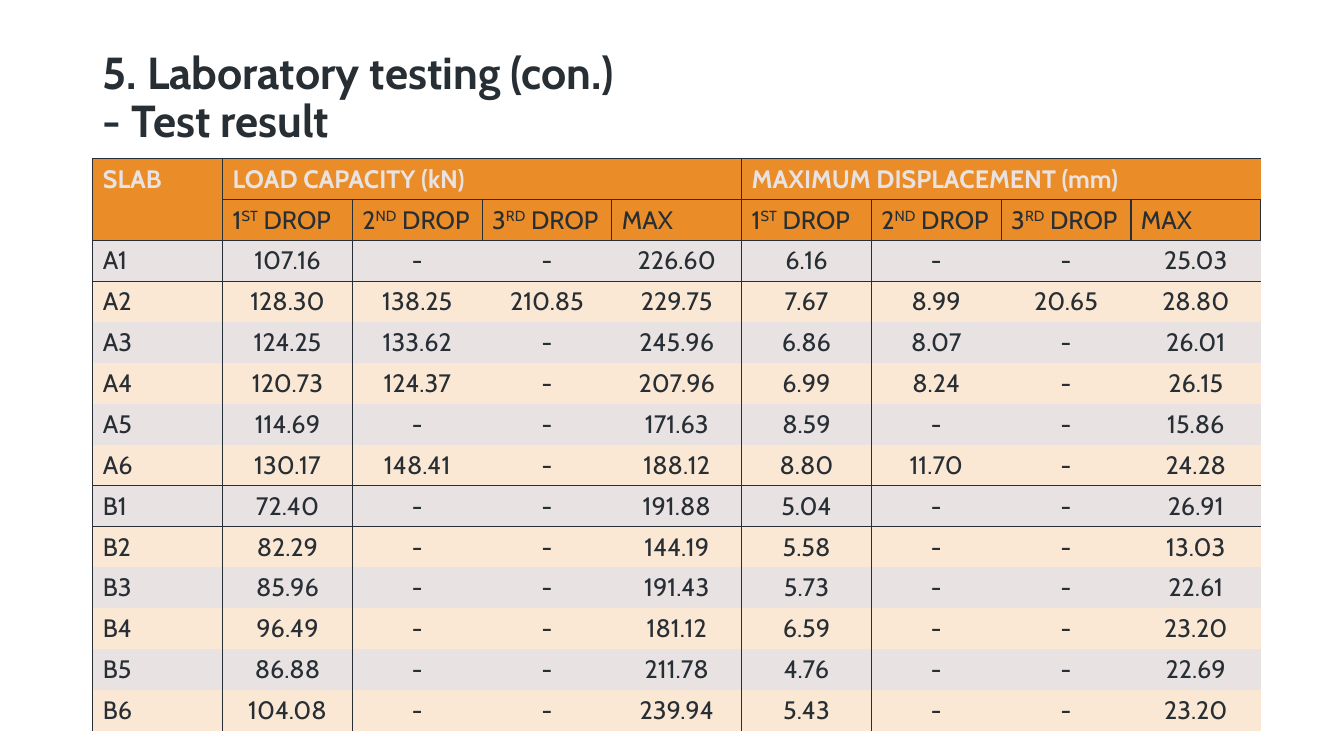
from pptx import Presentation, util as u
from pptx.dml.color import RGBColor
from pptx.enum import text
from pptx.oxml import parse_xml
from pptx.oxml.ns import nsdecls

INK, ORANGE, GREY, CREAM = "272E34", "EA8C27", "E8E3E2", "FBE8D4"
PLAIN = "{2D5ABB26-0587-4C30-8999-92F81FD0307C}"
DROPS = ["1^ST^ DROP", "2^ND^ DROP", "3^RD^ DROP", "MAX"]
HEADS = [
    ["SLAB", "LOAD CAPACITY (kN)", "", "", "", "MAXIMUM DISPLACEMENT (mm)", "", "", ""],
    [""] + DROPS * 2,
]
TESTS = """
A1 107.16 - - 226.60 6.16 - - 25.03
A2 128.30 138.25 210.85 229.75 7.67 8.99 20.65 28.80
A3 124.25 133.62 - 245.96 6.86 8.07 - 26.01
A4 120.73 124.37 - 207.96 6.99 8.24 - 26.15
A5 114.69 - - 171.63 8.59 - - 15.86
A6 130.17 148.41 - 188.12 8.80 11.70 - 24.28
B1 72.40 - - 191.88 5.04 - - 26.91
B2 82.29 - - 144.19 5.58 - - 13.03
B3 85.96 - - 191.43 5.73 - - 22.61
B4 96.49 - - 181.12 6.59 - - 23.20
B5 86.88 - - 211.78 4.76 - - 22.69
B6 104.08 - - 239.94 5.43 - - 23.20
"""
ROWS = HEADS + [line.split() for line in TESTS.strip().splitlines()]
MERGES = [(0, 0, 1, 0), (0, 1, 0, 4), (0, 5, 0, 8)]


def color(code):
    return RGBColor.from_string(code)


def upright(row, edge):
    """Whether a vertical rule runs along this column edge."""
    return edge in (0, 1, 5) or row == 1 or (row == 0 and edge == 9)


def level(edge, col):
    """Whether a horizontal rule runs along this row edge."""
    return edge in (0, 2, 8) or (edge == 1 and col > 0)


class Deck:
    font = "Cabin"

    def __init__(self):
        self.prs = Presentation()
        self.prs.slide_width, self.prs.slide_height = u.Cm(33.87), u.Cm(19.05)
        self.slide = self.prs.slides.add_slide(self.prs.slide_layouts[6])

    def style(self, para, size, code, bold=False):
        font = para.font
        font.name, font.size, font.bold = self.font, u.Pt(size), bold
        font.color.rgb = color(code)

    def title(self, words, left, top, width, height):
        box = self.slide.shapes.add_textbox(
            u.Cm(left), u.Cm(top), u.Cm(width), u.Cm(height))
        frame = box.text_frame
        frame.word_wrap = True
        frame.vertical_anchor = text.MSO_ANCHOR.MIDDLE
        para = frame.paragraphs[0]
        para.text = words
        para.line_spacing = 0.9
        self.style(para, 32, INK, True)

    def rule(self, cell, row, col):
        """Draw the cell's borders."""
        sides = {"L": upright(row, col), "R": upright(row, col + 1),
                 "T": level(row, col), "B": level(row + 1, col)}
        for side, shown in sides.items():
            if shown:
                cell._tc.get_or_add_tcPr().append(parse_xml(
                    f'<a:ln{side} {nsdecls("a")} w="12700"><a:solidFill>'
                    f'<a:srgbClr val="{INK}"/></a:solidFill></a:ln{side}>'))

    def cell(self, cell, row, col, words):
        self.rule(cell, row, col)
        cell.fill.solid()
        shade = ORANGE if row < 2 else (GREY, CREAM)[row % 2]
        cell.fill.fore_color.rgb = color(shade)
        para = cell.text_frame.paragraphs[0]
        for i, part in enumerate(words.split("^")):
            if part:
                run = para.add_run()
                run.text = part
                if i % 2:
                    run._r.get_or_add_rPr().set("baseline", "30000")
        if row > 1 and col > 0:
            para.alignment = text.PP_ALIGN.CENTER
            cell.vertical_anchor = text.MSO_ANCHOR.MIDDLE
        self.style(para, 18, INK if row else GREY, row == 0)

    def table(self, rows, merges, left, top, wide, high):
        """Lay out equal cells, each wide by high."""
        count = len(rows[0])
        grid = self.slide.shapes.add_table(
            len(rows), count, u.Cm(left), u.Cm(top),
            u.Cm(wide * count), u.Cm(high * len(rows))).table
        grid.first_row = grid.horz_banding = False
        grid._tbl.tblPr[0].text = PLAIN
        for r, row in enumerate(rows):
            for c, words in enumerate(row):
                self.cell(grid.cell(r, c), r, c, words)
        for r, c, last, end in merges:
            grid.cell(r, c).merge(grid.cell(last, end))


def main():
    deck = Deck()
    deck.table(ROWS, MERGES, 2.34, 4, 3.27, 1.03)
    deck.title("5. Laboratory testing (con.)\v- Test result", 2.34, 1.17, 29.21, 2.64)
    deck.prs.save("out.pptx")


if __name__ == "__main__":
    main()
